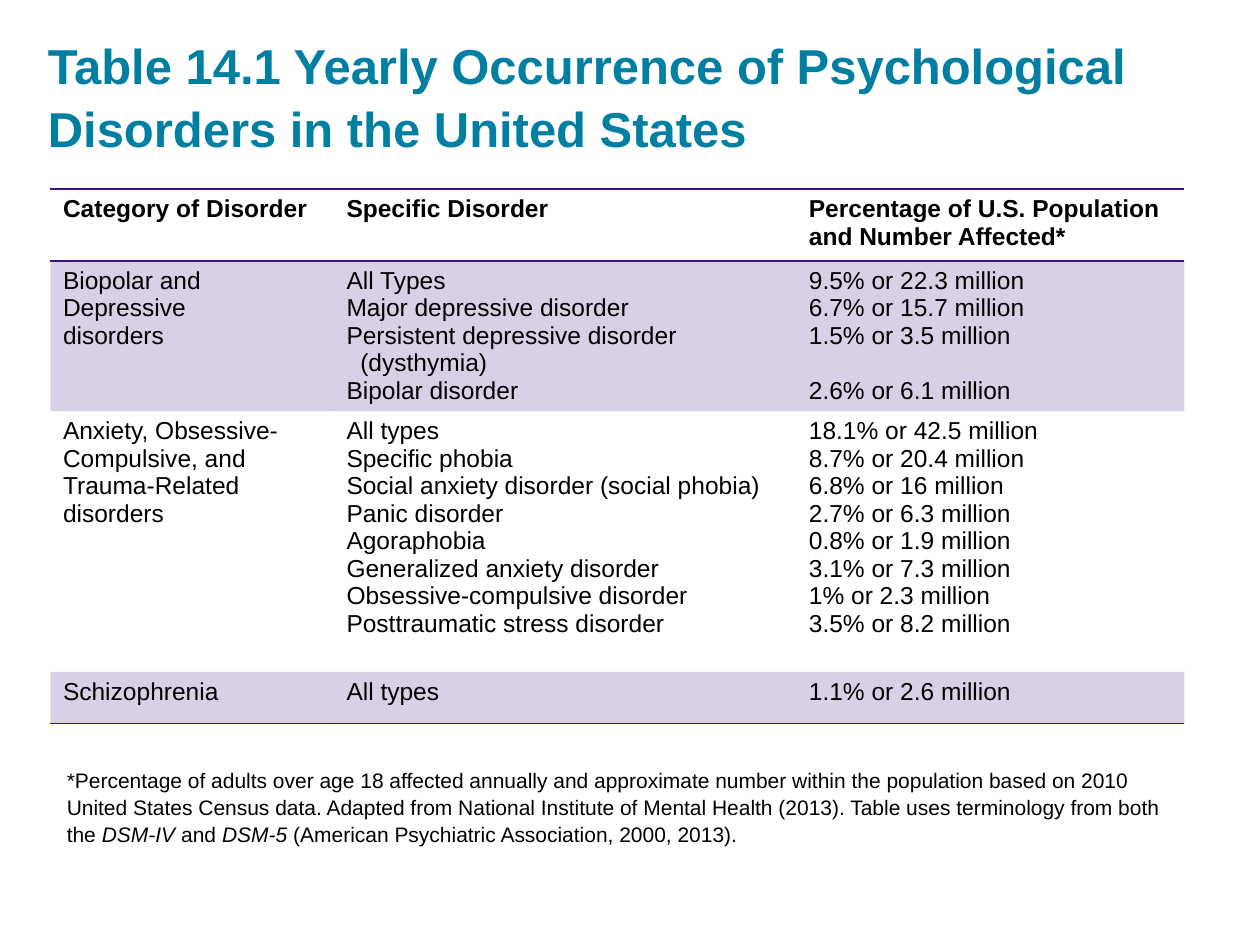
from pptx import Presentation
from pptx.dml.color import RGBColor
from pptx.enum.text import MSO_ANCHOR as Anchor, MSO_AUTO_SIZE as AutoSize, PP_ALIGN as Align
from pptx.oxml.ns import qn
from pptx.util import Inches, Pt
from lxml.etree import SubElement

TEAL, PURPLE, BLACK = "007FA3", "3C1581", "000000"
NO_GRID_STYLE = "{2D5ABB26-0587-4C30-8999-92F81FD0307C}"
TABLE_LINE = 15.64  # height of one 14 pt line of table text

TITLE = "Table 14.1 Yearly Occurrence of Psychological Disorders in the United States"
HEADER = ["Category of Disorder", "Specific Disorder",
          "Percentage of U.S. Population and Number Affected*"]
# Each category with its (disorder, share) pairs; \n is a line break
GROUPS = [
    ("Biopolar and\nDepressive\ndisorders", [
        ("All Types", "9.5% or 22.3 million"),
        ("Major depressive disorder", "6.7% or 15.7 million"),
        ("Persistent depressive disorder\n(dysthymia)", "1.5% or 3.5 million"),
        ("Bipolar disorder", "2.6% or 6.1 million")]),
    ("Anxiety, Obsessive-Compulsive, and Trauma-Related disorders", [
        ("All types", "18.1% or 42.5 million"),
        ("Specific phobia", "8.7% or 20.4 million"),
        ("Social anxiety disorder (social phobia)", "6.8% or 16 million"),
        ("Panic disorder", "2.7% or 6.3 million"),
        ("Agoraphobia", "0.8% or 1.9 million"),
        ("Generalized anxiety disorder", "3.1% or 7.3 million"),
        ("Obsessive-compulsive disorder", "1% or 2.3 million"),
        ("Posttraumatic stress disorder", "3.5% or 8.2 million")]),
    ("Schizophrenia", [("All types", "1.1% or 2.6 million")]),
]
COLUMN_WIDTHS = [2.25, 3.67, 3.08]
ROW_HEIGHTS = [0.57, 1.19, 2.07, 0.41]
FOOTNOTE = [
    ("*Percentage of adults over age 18 affected annually and approximate number within "
     "the population based on 2010 United States Census data. Adapted from National "
     "Institute of Mental Health (2013). Table uses terminology from both the ", False),
    ("DSM-IV", True), (" and ", False), ("DSM-5", True),
    (" (American Psychiatric Association, 2000, 2013).", False),
]


def color(value):
    return RGBColor.from_string(value)


class TableSlide:
    font_name = "Arial"

    def __init__(self, presentation):
        self.slide = presentation.slides.add_slide(presentation.slide_layouts[1])

    def add_run(self, paragraph, text, size, ink=BLACK, bold=False, italic=False):
        run = paragraph.add_run()
        run.text = text
        font = run.font
        font.name, font.size, font.bold, font.italic = self.font_name, Pt(size), bold, italic
        font.color.rgb = color(ink)

    def set_indent(self, paragraph, left, first):
        properties = paragraph._p.get_or_add_pPr()
        properties.set("marL", str(Inches(left)))
        properties.set("indent", str(Inches(first)))
        return properties

    def fill_placeholder(self, shape, box, anchor):
        shape.left, shape.top, shape.width, shape.height = map(Inches, box)
        frame = shape.text_frame
        frame.word_wrap, frame.auto_size = True, AutoSize.NONE
        frame.vertical_anchor = anchor
        frame.margin_left = frame.margin_right = frame.margin_top = frame.margin_bottom = 0
        paragraph = frame.paragraphs[0]
        paragraph.alignment = Align.LEFT
        paragraph.space_before = Pt(0)
        paragraph.line_spacing = 1.07
        return paragraph

    def title(self, text):
        paragraph = self.fill_placeholder(self.slide.shapes.title, (0.38, 0.3, 9.25, 0.95),
                                          Anchor.BOTTOM)
        self.add_run(paragraph, text, 28, TEAL, bold=True)

    def footnote(self, parts):
        paragraph = self.fill_placeholder(self.slide.placeholders[1], (0.4, 6.08, 9, 0.67),
                                          Anchor.TOP)
        SubElement(self.set_indent(paragraph, 0.13, 0), qn("a:buNone"))
        for text, italic in parts:
            self.add_run(paragraph, text, 12, italic=italic)

    def border(self, cell, side):
        line = SubElement(cell._tc.get_or_add_tcPr(), qn(f"a:ln{side}"), w=str(Pt(1)))
        solid = SubElement(line, qn("a:solidFill"))
        SubElement(solid, qn("a:srgbClr"), val=PURPLE)

    def shade(self, cell, shaded):
        if not shaded:
            cell.fill.background()
            return
        cell.fill.solid()
        cell.fill.fore_color.rgb = color(PURPLE)
        tint = cell._tc.tcPr.find(qn("a:solidFill")).find(qn("a:srgbClr"))
        SubElement(tint, qn("a:alpha"), val="20000")

    def write_cell(self, cell, entries, bold=False, hanging=False):
        """Write one paragraph per (text, lines to skip above) entry."""
        frame = cell.text_frame
        for index, (text, skipped) in enumerate(entries):
            paragraph = frame.add_paragraph() if index else frame.paragraphs[0]
            if hanging and "\n" in text:
                self.set_indent(paragraph, 0.11, -0.11)
            if skipped:
                paragraph.space_before = Pt(skipped * TABLE_LINE)
            for number, line in enumerate(text.split("\n")):
                if number:
                    paragraph.add_line_break()
                self.add_run(paragraph, line, 14, bold=bold)

    def table(self, header, groups):
        table = self.slide.shapes.add_table(
            len(groups) + 1, len(header), Inches(0.4), Inches(1.5),
            Inches(sum(COLUMN_WIDTHS)), Inches(sum(ROW_HEIGHTS))).table
        table.first_row = table.horz_banding = False
        table._tbl.tblPr.find(qn("a:tableStyleId")).text = NO_GRID_STYLE
        for column, width in zip(table.columns, COLUMN_WIDTHS):
            column.width = Inches(width)
        for row, height in zip(table.rows, ROW_HEIGHTS):
            row.height = Inches(height)

        # Rules around the header and below the last row, tint on odd rows
        for index, row in enumerate(table.rows):
            for cell in row.cells:
                if index == 0:
                    self.border(cell, "T")
                if index in (0, len(groups)):
                    self.border(cell, "B")
                self.shade(cell, index % 2 == 1)

        for column, text in enumerate(header):
            self.write_cell(table.cell(0, column), [(text, 0)], bold=True)
        for row, (category, pairs) in enumerate(groups, 1):
            disorders = [disorder for disorder, _ in pairs]
            # A two-line disorder pushes the next share down by one line
            skips = [0] + [disorder.count("\n") for disorder in disorders]
            self.write_cell(table.cell(row, 0), [(category, 0)])
            self.write_cell(table.cell(row, 1), [(text, 0) for text in disorders], hanging=True)
            self.write_cell(table.cell(row, 2),
                            [(share, skip) for (_, share), skip in zip(pairs, skips)])


def main():
    presentation = Presentation()
    presentation.slide_width, presentation.slide_height = Inches(10), Inches(7.5)
    page = TableSlide(presentation)
    page.title(TITLE)
    page.table(HEADER, GROUPS)
    page.footnote(FOOTNOTE)
    presentation.save("out.pptx")


if __name__ == "__main__":
    main()
